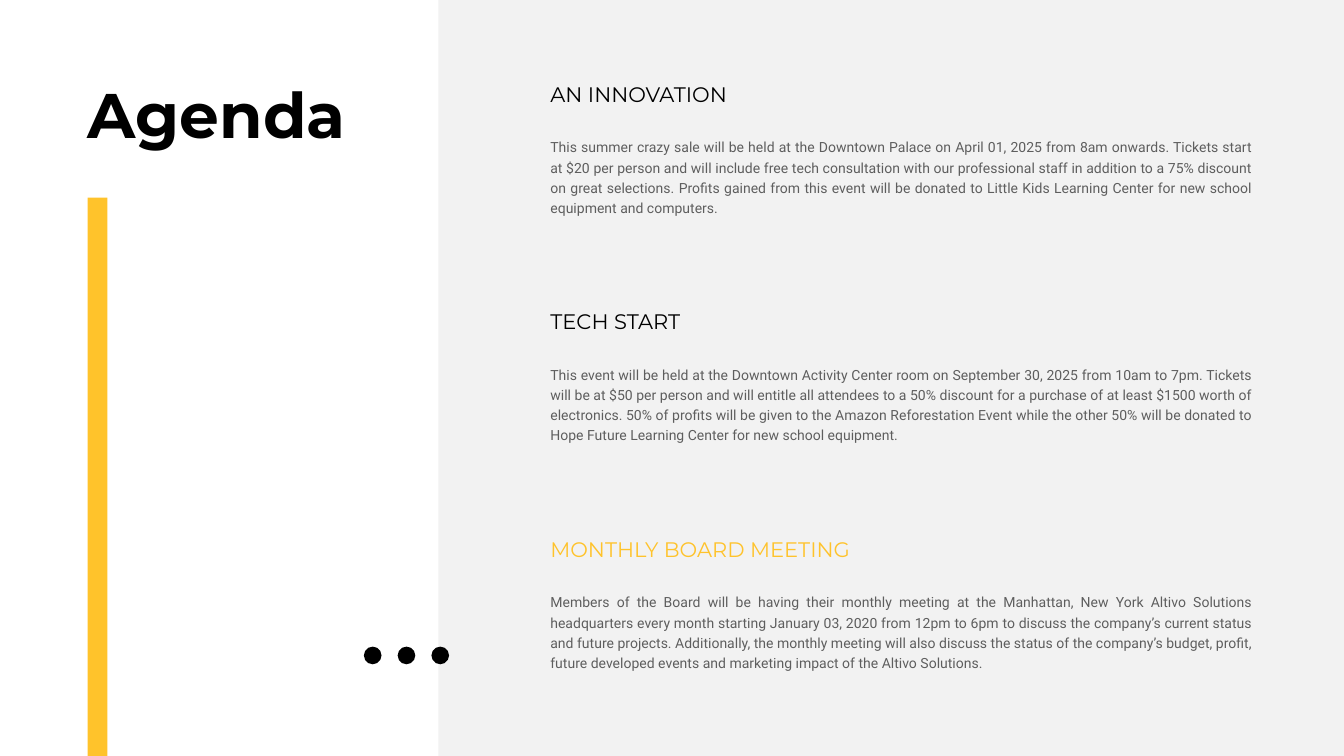
from lxml import etree
from pptx import Presentation, util as u
from pptx.dml.color import RGBColor
from pptx.enum import shapes, text
from pptx.oxml.ns import qn

COLORS = {"panel": "D5D5D5", "accent": "FFC32B", "ink": "000000", "body": "5E5E5E"}
COLUMNS, ROWS = 80, 45

AGENDA = [
    ("AN INNOVATION", "ink",
     "This summer crazy sale will be held at the Downtown Palace on April 01, 2025 from 8am "
     "onwards. Tickets start at $20 per person and will include free tech consultation with our "
     "professional staff in addition to a 75% discount on great selections. Profits gained from "
     "this event will be donated to Little Kids Learning Center for new school equipment and "
     "computers."),
    ("TECH START", "ink",
     "This event will be held at the Downtown Activity Center room on September 30, 2025 from "
     "10am to 7pm. Tickets will be at $50 per person and will entitle all attendees to a 50% "
     "discount for a purchase of at least $1500 worth of electronics. 50% of profits will be "
     "given to the Amazon Reforestation Event while the other 50% will be donated to Hope Future "
     "Learning Center for new school equipment."),
    ("MONTHLY BOARD MEETING", "accent",
     "Members of the Board will be having their monthly meeting at the Manhattan, New York "
     "Altivo Solutions headquarters every month starting January 03, 2020 from 12pm to 6pm to "
     "discuss the company’s current status and future projects. Additionally, the monthly "
     "meeting will also discuss the status of the company’s budget, profit, future developed "
     "events and marketing impact of the Altivo Solutions."),
]


def write(box, words, *, size, font, color, bold=False, align=text.PP_ALIGN.LEFT,
          spacing=1.0, inset=0.0):
    """Fill a box with one formatted paragraph."""
    frame = box.text_frame
    frame.word_wrap = True
    frame.auto_size = text.MSO_AUTO_SIZE.NONE
    frame.vertical_anchor = text.MSO_ANCHOR.MIDDLE
    frame.margin_left = frame.margin_right = u.Inches(inset)
    frame.margin_top = frame.margin_bottom = u.Inches(inset)
    para = frame.paragraphs[0]
    para.alignment, para.line_spacing = align, spacing
    para.space_before = u.Pt(0)
    span = para.add_run()
    span.text = words
    span.font.size, span.font.name, span.font.bold = u.Pt(size), font, bold
    span.font.color.rgb = RGBColor.from_string(COLORS[color])


class Page:
    """One slide, measured in grid columns and rows."""

    def __init__(self, deck):
        self.cell_width = deck.slide_width / COLUMNS
        self.cell_height = deck.slide_height / ROWS
        self.slide = deck.slides.add_slide(deck.slide_layouts[5])

    def place(self, column, row, columns, rows):
        return (round(column * self.cell_width), round(row * self.cell_height),
                round(columns * self.cell_width), round(rows * self.cell_height))

    def title(self, words, area, **style):
        box = self.slide.shapes.title
        box.left, box.top, box.width, box.height = self.place(*area)
        write(box, words, **style)

    def label(self, words, area, **style):
        write(self.slide.shapes.add_textbox(*self.place(*area)), words, **style)

    def block(self, kind, area, color, opacity=None):
        shape = self.slide.shapes.add_shape(kind, *self.place(*area))
        shape.shadow.inherit = False
        shape.line.fill.background()
        shape.fill.solid()
        shape.fill.fore_color.rgb = RGBColor.from_string(COLORS[color])
        if opacity is not None:
            tint = next(shape.fill._xPr.iter(qn("a:srgbClr")))
            etree.SubElement(tint, qn("a:alpha")).set("val", str(opacity * 1000))


def main():
    deck = Presentation()
    deck.slide_width, deck.slide_height = u.Inches(26.67), u.Inches(15)
    page = Page(deck)
    kinds = shapes.MSO_SHAPE

    # Right-hand panel and title
    page.block(kinds.RECTANGLE, (26.1, -0.12, 53.97, 45.27), "panel", opacity=30)
    page.title("Agenda", (5.22, 4.44, 15.72, 4.59),
               size=90, font="Montserrat", color="ink", bold=True)

    # Agenda items at an equal pitch
    for index, (heading, color, details) in enumerate(AGENDA):
        top = 4.83 + index * 13.54
        page.label(heading, (32.58, top, 32.7, 1.89), size=30, font="Montserrat",
                   color=color, spacing=0.7, inset=0.06)
        page.label(details, (32.58, top + 3.18, 42.15, 4.92), size=20, font="Roboto",
                   color="body", align=text.PP_ALIGN.JUSTIFY, spacing=1.2, inset=0.06)

    # Accent bar and dots
    page.block(kinds.RECTANGLE, (5.22, 11.76, 1.17, 33.33), "accent")
    for index in range(3):
        page.block(kinds.OVAL, (21.66 + index * 2.01, 38.49, 1.05, 1.05), "ink")

    deck.save("out.pptx")


if __name__ == "__main__":
    main()
